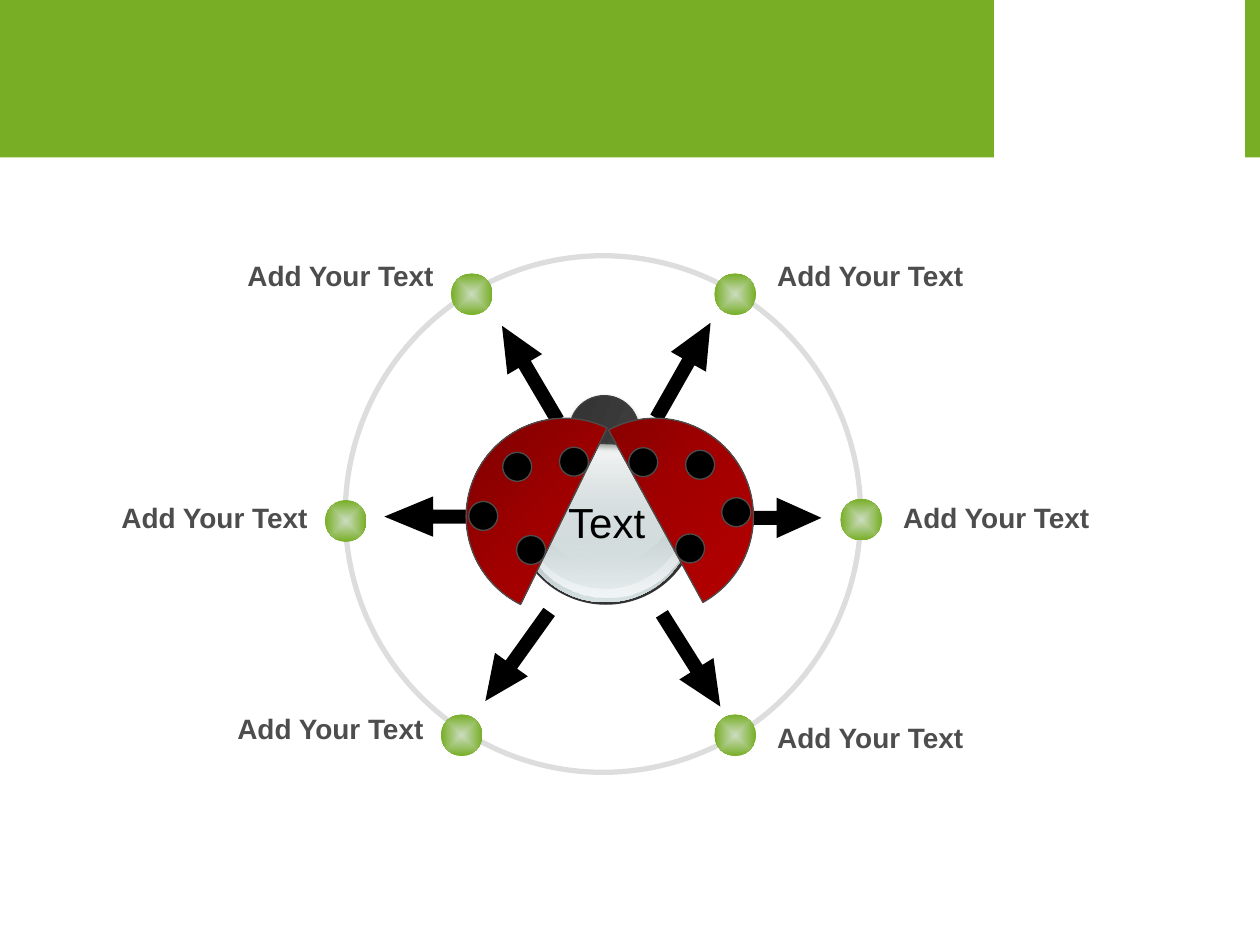
import math
from dataclasses import dataclass

import pptx
import pptx.dml.color
import pptx.enum.shapes
import pptx.enum.text
import pptx.oxml
import pptx.oxml.ns
import pptx.util

RGBColor = pptx.dml.color.RGBColor
SHAPE = pptx.enum.shapes.MSO_SHAPE
ALIGN = pptx.enum.text.PP_ALIGN

GREEN = RGBColor(0x77, 0xAE, 0x26)
PALE_GREEN = RGBColor(0xCC, 0xDC, 0xC0)
WHITE = RGBColor(0xFF, 0xFF, 0xFF)
BLACK = RGBColor(0x00, 0x00, 0x00)
RING_GREY = RGBColor(0xDD, 0xDD, 0xDD)
TEXT_GREY = RGBColor(0x4D, 0x4D, 0x4D)
SHELL = RGBColor(0x33, 0x33, 0x33)
HEAD_DARK = RGBColor(0x30, 0x30, 0x30)
HEAD_LIGHT = RGBColor(0x3E, 0x3E, 0x3E)
HEAD_LINE = RGBColor(0x3F, 0x3F, 0x3F)
STEEL = RGBColor(0x63, 0x68, 0x69)
SILVER = RGBColor(0xAA, 0xB2, 0xB3)
MIST = RGBColor(0xD6, 0xE1, 0xE2)
FROST = RGBColor(0xF1, 0xF5, 0xF5)
DARK_RED = RGBColor(0x72, 0x00, 0x00)
MID_RED = RGBColor(0xA2, 0x00, 0x00)
RED = RGBColor(0xC0, 0x00, 0x00)

COLUMNS, ROWS = 100, 75
CELL = pptx.util.Inches(10) // COLUMNS
FONT = "Arial"


@dataclass
class Box:
    """A region measured in grid cells."""
    left: float
    top: float
    width: float
    height: float

    def around(self, x, y, width, height):
        """A box centred on (x, y), counted from this box's corner."""
        return Box(self.left + x - width / 2, self.top + y - height / 2, width, height)

    def emu(self):
        return [round(n * CELL) for n in (self.left, self.top, self.width, self.height)]


def add_shape(page, kind, box, fill=None, line=None, line_width=0.75, rotation=0):
    shape = page.shapes.add_shape(kind, *box.emu())
    shape.shadow.inherit = False
    shape.rotation = rotation
    if fill is None:
        shape.fill.background()
    else:
        shape.fill.solid()
        shape.fill.fore_color.rgb = fill
    if line is None:
        shape.line.fill.background()
    else:
        shape.line.color.rgb = line
        shape.line.width = pptx.util.Pt(line_width)
    return shape


def set_gradient(shape, stops, direction):
    """Replace a solid fill; stops are (position %, colour, opacity %)."""
    marks = "".join(
        f'<a:gs pos="{position * 1000}"><a:srgbClr val="{color}">'
        f'<a:alpha val="{opacity * 1000}"/></a:srgbClr></a:gs>'
        for position, color, opacity in stops)
    gradient = pptx.oxml.parse_xml(
        f'<a:gradFill {pptx.oxml.ns.nsdecls("a")} rotWithShape="1">'
        f'<a:gsLst>{marks}</a:gsLst>{direction}</a:gradFill>')
    properties = shape._element.spPr
    properties.replace(properties.find(pptx.oxml.ns.qn("a:solidFill")), gradient)


def linear(degrees):
    return f'<a:lin ang="{degrees * 60000}" scaled="0"/>'


def radial(form, left, top, right, bottom):
    return (f'<a:path path="{form}"><a:fillToRect l="{left * 1000}" t="{top * 1000}" '
            f'r="{right * 1000}" b="{bottom * 1000}"/></a:path>')


def add_text(page, box, text, size, color, align, bold=False):
    label = page.shapes.add_textbox(*box.emu())
    frame = label.text_frame
    frame.word_wrap = False
    frame.auto_size = pptx.enum.text.MSO_AUTO_SIZE.SHAPE_TO_FIT_TEXT
    frame.text = text
    para = frame.paragraphs[0]
    para.alignment = align
    font = para.runs[0].font
    font.name, font.size, font.bold = FONT, pptx.util.Pt(size), bold
    font.color.rgb = color


def draw_header(page, box):
    add_shape(page, SHAPE.RECTANGLE, box, GREEN)
    add_shape(page, SHAPE.RECTANGLE, Box(box.left + 78.9, box.top, 19.9, 13.3), WHITE)


def draw_body(page, box):
    """Glossy round body and the head behind it."""
    add_shape(page, SHAPE.OVAL, box, SHELL)
    layers = [  # centre x, centre y, width, height, stops
        (7.25, 7.2, 14.1, 14, [(0, STEEL, 100), (100, MIST, 100)]),
        (7.3, 7, 13.8, 13.6, [(0, MIST, 0), (100, FROST, 100)]),
        (7.15, 6.75, 13.1, 12.7, [(0, SILVER, 100), (100, MIST, 48)]),
        (7.1, 5.85, 11.6, 10.3, [(0, WHITE, 100), (100, MIST, 38)]),
    ]
    for x, y, width, height, stops in layers:
        gloss = add_shape(page, SHAPE.OVAL, box.around(x, y, width, height), MIST)
        set_gradient(gloss, stops, linear(90))

    head = add_shape(page, SHAPE.CHORD, box.around(7.15, 0.55, 5.5, 5.5),
                     HEAD_DARK, HEAD_LINE, rotation=114.4)
    set_gradient(head, [(0, HEAD_DARK, 100), (80, HEAD_LIGHT, 100),
                        (100, HEAD_LIGHT, 100)], linear(270))
    effects = head._element.spPr.find(pptx.oxml.ns.qn("a:effectLst"))
    effects.append(pptx.oxml.parse_xml(
        f'<a:outerShdw {pptx.oxml.ns.nsdecls("a")} blurRad="40000" dist="23000" '
        f'dir="5400000" rotWithShape="0"><a:srgbClr val="{BLACK}">'
        '<a:alpha val="35000"/></a:srgbClr></a:outerShdw>'))


def draw_wheel(page, box):
    """Ring with six nodes, each with an arrow and a label."""
    add_shape(page, SHAPE.OVAL, box, line=RING_GREY, line_width=3)
    spokes = [  # node x, y; arrow x, y, length, angle; label side, label rise
        (30.95, 3.05, 26.85, 9.1, 8.7, 299.6, 1, -1.5),
        (40.95, 20.95, 33.45, 20.8, 8.7, 0, 1, -0.2),
        (30.95, 38.05, 27.45, 32.1, 8.7, 57.8, 1, 0.2),
        (9.25, 38.05, 13.65, 31.8, 8.7, 125.6, -1, -0.5),
        (0.05, 21.05, 7.8, 20.7, 9.4, 180, -1, -0.3),
        (10.05, 3.05, 14.65, 9.3, 8.7, 239.5, -1, -1.5),
    ]
    for x, y, arrow_x, arrow_y, length, angle, side, rise in spokes:
        arrow = add_shape(page, SHAPE.RIGHT_ARROW,
                          box.around(arrow_x, arrow_y, length, 3.2), BLACK, rotation=angle)
        arrow.adjustments[0] = 0.35
        arrow.adjustments[1] = 1.21 if length > 9 else 1.11
        label_x = x + (10.95 if side > 0 else -10.65)
        add_text(page, box.around(label_x, y + rise, 17.2, 3.7), "Add Your Text", 16,
                 TEXT_GREY, ALIGN.LEFT if side > 0 else ALIGN.RIGHT, bold=True)
        node = add_shape(page, SHAPE.OVAL, box.around(x, y, 3.3, 3.3), GREEN)
        set_gradient(node, [(0, PALE_GREEN, 100), (100, GREEN, 100)],
                     radial("shape", 50, 50, 50, 50))


def draw_wing(page, box, tilt, mirrored=False):
    """Spotted wing; the right one mirrors the left and tilts the other way."""
    side = -1 if mirrored else 1
    rotation = side * tilt % 360
    wing = add_shape(page, SHAPE.CHORD, box, RED, TEXT_GREY, rotation=rotation)
    wing.adjustments[0] = 54.46
    wing.adjustments[1] = 162
    if mirrored:
        wing._element.spPr.xfrm.set("flipH", "1")
    set_gradient(wing, [(0, DARK_RED, 100), (50, MID_RED, 100), (100, RED, 100)],
                 radial("circle", 0, 0, 100, 100))
    cos, sin = math.cos(math.radians(tilt)), math.sin(math.radians(tilt))
    for u, v in [(-1.21, -4.25), (-5.09, -1.93), (-1.24, 3.54), (-5.83, 2.75)]:
        x = box.width / 2 + side * (u * cos - v * sin)
        y = box.height / 2 + u * sin + v * cos
        add_shape(page, SHAPE.OVAL, box.around(x, y, 2.3, 2.3), BLACK, TEXT_GREY,
                  rotation=rotation)


def main():
    deck = pptx.Presentation()
    deck.slide_width, deck.slide_height = COLUMNS * CELL, ROWS * CELL
    page = deck.slides.add_slide(deck.slide_layouts[6])
    draw_header(page, Box(0, 0, COLUMNS, 12.5))
    draw_body(page, Box(40.8, 33.6, 14.6, 14.4))
    draw_wheel(page, Box(27.4, 20.3, 40.9, 41))
    add_text(page, Box(43.9, 38.9, 8.5, 5), "Text", 24, BLACK, ALIGN.CENTER)
    draw_wing(page, Box(37, 33.2, 15.6, 15.6), 25.7)
    draw_wing(page, Box(44.2, 33.2, 15.6, 15.6), 28.3, mirrored=True)
    deck.save("out.pptx")


if __name__ == "__main__":
    main()
